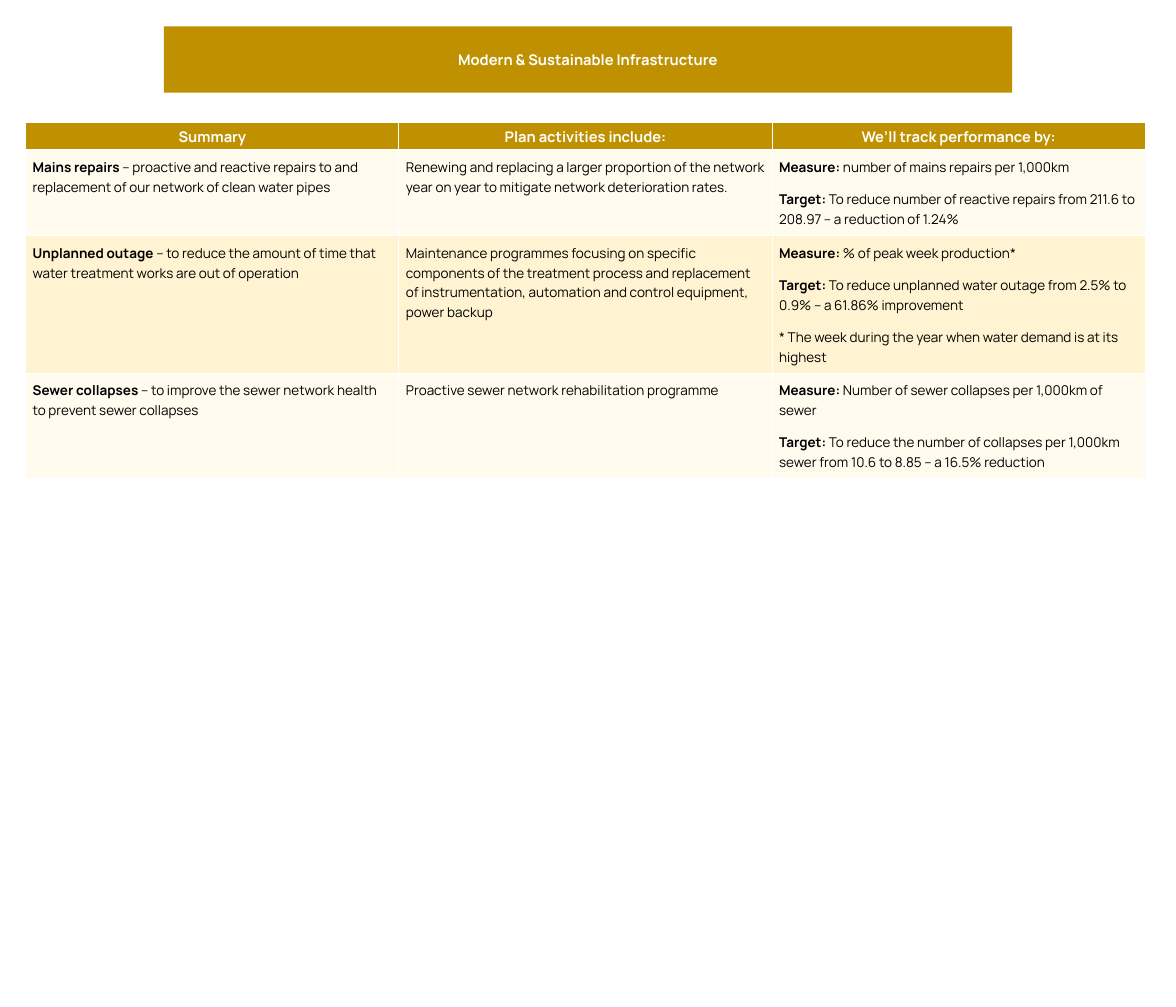
from dataclasses import dataclass

from lxml import etree
from pptx import Presentation
from pptx.dml.color import RGBColor
from pptx.enum.text import MSO_ANCHOR, PP_ALIGN
from pptx.oxml.ns import qn
from pptx.util import Cm, Pt

CENTER, LEFT = PP_ALIGN.CENTER, PP_ALIGN.LEFT
MIDDLE, TOP = MSO_ANCHOR.MIDDLE, MSO_ANCHOR.TOP
TITLE_ONLY = 5


@dataclass(frozen=True)
class Theme:
    """Colours, font and type sizes of the slide."""
    font: str = "Manrope"
    gold: RGBColor = RGBColor(0xBF, 0x90, 0x00)
    white: RGBColor = RGBColor(0xFF, 0xFF, 0xFF)
    black: RGBColor = RGBColor(0x00, 0x00, 0x00)
    bands: tuple = (RGBColor(0xFF, 0xFB, 0xEF), RGBColor(0xFF, 0xF3, 0xD1))
    heading_size: Pt = Pt(12)
    body_size: Pt = Pt(11)


THEME = Theme()
TITLE = "Modern & Sustainable Infrastructure"
HEADINGS = ["Summary", "Plan activities include:", "We’ll track performance by:"]
ACTIVITIES = [
    (
        [("Mains repairs", " – proactive and reactive repairs to and replacement of our "
          "network of clean water pipes")],
        [("", "Renewing and replacing a larger proportion of the network year on year "
          "to mitigate network deterioration rates.")],
        [("Measure:", " number of mains repairs per 1,000km"),
         ("Target:", " To reduce number of reactive repairs from 211.6 to 208.97 – "
          "a reduction of 1.24%")],
    ),
    (
        [("Unplanned outage", " – to reduce the amount of time that water treatment "
          "works are out of operation")],
        [("", "Maintenance programmes focusing on specific components of the treatment "
          "process and replacement of instrumentation, automation and control "
          "equipment, power backup")],
        [("Measure:", " % of peak week production*"),
         ("Target:", " To reduce unplanned water outage from 2.5% to 0.9% – "
          "a 61.86% improvement"),
         ("", "* The week during the year when water demand is at its highest")],
    ),
    (
        [("Sewer collapses", " – to improve the sewer network health to prevent sewer "
          "collapses")],
        [("", "Proactive sewer network rehabilitation programme")],
        [("Measure:", " Number of sewer collapses per 1,000km of sewer"),
         ("Target:", " To reduce the number of collapses per 1,000km sewer from 10.6 to "
          "8.85 – a 16.5% reduction")],
    ),
]
COLUMN_WIDTH = Cm(10.75)
ROW_HEIGHTS = [Cm(0.79), Cm(2.24), Cm(3.58), Cm(2.72)]


def style_paragraph(paragraph, size, color, alignment):
    """Set the font and alignment shared by all runs of a paragraph."""
    paragraph.alignment = alignment
    paragraph.font.name = THEME.font
    paragraph.font.size = size
    paragraph.font.color.rgb = color


def add_title_banner(slide):
    """Turn the title placeholder into the rounded gold banner."""
    title = slide.shapes.title
    title.left, title.top, title.width, title.height = Cm(4.72), Cm(0.76), Cm(24.43), Cm(1.91)
    properties = title.element.spPr
    geometry = etree.SubElement(properties, qn("a:prstGeom"), prst="roundRect")
    etree.SubElement(geometry, qn("a:avLst"))
    title.fill.solid()
    title.fill.fore_color.rgb = THEME.gold
    title.text_frame.text = TITLE
    title.text_frame.vertical_anchor = MIDDLE
    paragraph = title.text_frame.paragraphs[0]
    style_paragraph(paragraph, THEME.heading_size, THEME.white, CENTER)
    paragraph.font.bold = True


def format_cell(cell, color, margin, anchor):
    """Set the fill, margins and anchor of a cell."""
    cell.fill.solid()
    cell.fill.fore_color.rgb = color
    cell.margin_left = cell.margin_right = margin
    cell.margin_top = cell.margin_bottom = margin
    cell.vertical_anchor = anchor


def write_cell(cell, entries, size, color, alignment, space_after):
    """Write one paragraph per entry, each a bold label and plain text."""
    frame = cell.text_frame
    for index, entry in enumerate(entries):
        paragraph = frame.add_paragraph() if index else frame.paragraphs[0]
        style_paragraph(paragraph, size, color, alignment)
        paragraph.line_spacing = 1.07
        paragraph.space_after = space_after
        for text, bold in zip(entry, (True, False)):
            if text:
                run = paragraph.add_run()
                run.text = text
                run.font.bold = bold


def add_activity_table(slide):
    """Add the table of activities and performance measures."""
    frame = slide.shapes.add_table(
        len(ROW_HEIGHTS), len(HEADINGS), Cm(0.74), Cm(3.53),
        COLUMN_WIDTH * len(HEADINGS), sum(ROW_HEIGHTS))
    table = frame.table
    for column in table.columns:
        column.width = COLUMN_WIDTH
    for row, height in zip(table.rows, ROW_HEIGHTS):
        row.height = height
    for cell, heading in zip(table.rows[0].cells, HEADINGS):
        format_cell(cell, THEME.gold, Cm(0), MIDDLE)
        write_cell(cell, [(heading, "")], THEME.heading_size, THEME.white, CENTER, Pt(8))
    for row_index, activity in enumerate(ACTIVITIES):
        band = THEME.bands[row_index % len(THEME.bands)]
        for cell, entries in zip(table.rows[row_index + 1].cells, activity):
            space_after = Pt(10) if len(entries) > 1 else Pt(8)
            format_cell(cell, band, Cm(0.2), TOP)
            write_cell(cell, entries, THEME.body_size, THEME.black, LEFT, space_after)


def main():
    """Build the slide and save the presentation."""
    presentation = Presentation()
    presentation.slide_width, presentation.slide_height = Cm(33.87), Cm(29)
    slide = presentation.slides.add_slide(presentation.slide_layouts[TITLE_ONLY])
    add_title_banner(slide)
    add_activity_table(slide)
    presentation.save("out.pptx")


if __name__ == "__main__":
    main()
